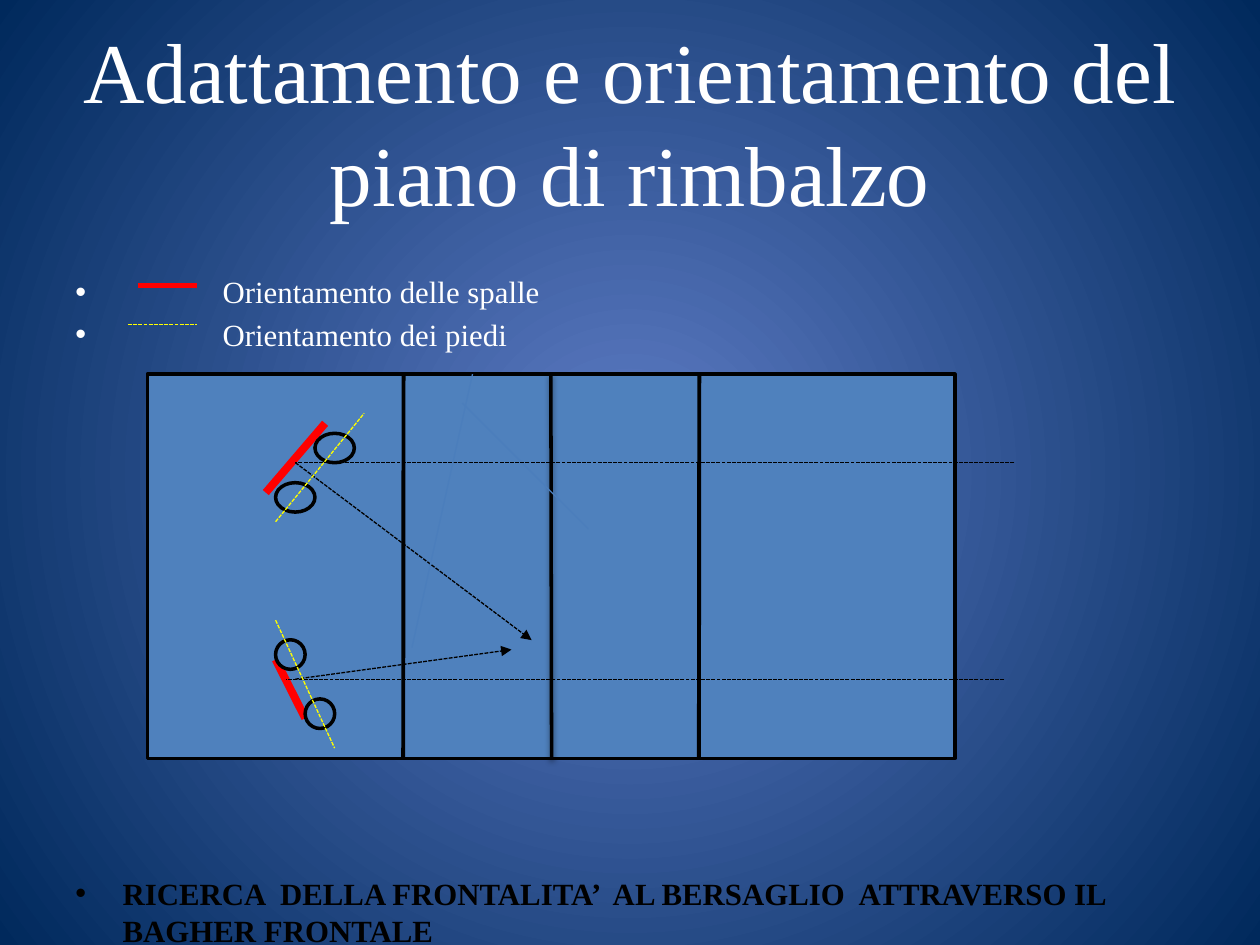
"""Build a volleyball slide on orienting the rebound plane towards the target."""
from lxml.etree import SubElement
from pptx import Presentation
from pptx.dml.color import RGBColor as RGB
from pptx.enum.dml import MSO_LINE_DASH_STYLE as DASH
from pptx.enum.shapes import MSO_CONNECTOR as CONN, MSO_SHAPE as SHAPE
from pptx.enum.text import MSO_ANCHOR as ANCHOR, PP_ALIGN as ALIGN
from pptx.oxml.ns import qn
from pptx.util import Pt

C = {"glow": "5E7CC5", "navy": "00295C", "court": "4F81BD", "faint": "4B7EBC",
     "black": "000000", "white": "FFFFFF", "red": "FF0000", "yellow": "FFFF00"}
FONT = "Times New Roman"

prs = Presentation()
prs.slide_width, prs.slide_height = Pt(720), Pt(540)
s = prs.slides.add_slide(prs.slide_layouts[6])

fill = s.background.fill
fill.gradient()
for stop, name in zip(fill.gradient_stops, ("glow", "navy")):
    stop.color.rgb = RGB.from_string(C[name])
grad = s._element.find(".//" + qn("a:gradFill"))
grad.remove(grad.find(qn("a:lin")))
path = SubElement(grad, qn("a:path"), path="circle")
SubElement(path, qn("a:fillToRect"), l="50000", t="50000", r="50000", b="50000")


def add_box(x, y, w, h):
    tf = s.shapes.add_textbox(Pt(x), Pt(y), Pt(w), Pt(h)).text_frame
    tf.word_wrap = True
    return tf


def add_run(p, text, size, color, pitch, bold=False):
    p.line_spacing = Pt(pitch)
    r = p.add_run()
    r.text = text
    r.font.name, r.font.size, r.font.bold = FONT, Pt(size), bold
    r.font.color.rgb = RGB.from_string(C[color])


tf = add_box(36, 21.6, 648, 90)
tf.vertical_anchor = ANCHOR.MIDDLE
tf.margin_top = Pt(8.6)
tf.paragraphs[0].alignment = ALIGN.CENTER
add_run(tf.paragraphs[0], "Adattamento e orientamento del piano di rimbalzo", 48.6, "white", 58.5)

tf = add_box(36, 152.6, 648, 376.6)
bullets = [
    ("Orientamento delle spalle", "white", False, 84.2, 0),
    ("Orientamento dei piedi", "white", False, 84.2, 3.5),
    ("RICERCA  DELLA FRONTALITA’  AL BERSAGLIO  ATTRAVERSO IL BAGHER FRONTALE",
     "black", True, 27, 298.4),
]
for i, (text, color, bold, indent, before) in enumerate(bullets):
    p = tf.add_paragraph() if i else tf.paragraphs[0]
    p.space_before = Pt(before)
    add_run(p, text, 17.6, color, 21, bold)
    pPr = p._p.get_or_add_pPr()
    pPr.set("marL", str(Pt(indent)))
    pPr.set("indent", str(-Pt(indent)))
    SubElement(pPr, qn("a:buFont"), typeface="Arial")
    SubElement(pPr, qn("a:buChar"), char="•")

TOP, BOTTOM = 213.8, 433.4
items = [
    ("rect", 84.2, TOP, 461.5, BOTTOM - TOP),
    ("shadow", 314.8, TOP, 315.2, BOTTOM, "black", 2),
    ("line", 399.6, TOP, 399.4, BOTTOM, "black", 2.25),
    ("line", 264.2, 230.4, 336.2, 302.4, "faint", 0.75),
    ("line", 230.6, TOP, 230.4, BOTTOM, "black", 2.25),
    ("line", 151.9, 281.5, 185.8, 241.9, "red", 4.5),
    ("dash", 579.6, 264.4, 168.8, 264.4, "black", 0.75),
    ("arrow", 168.8, 264.4, 303.8, 365.8, "black", 0.75),
    ("oval", 157.5, 275.8, 22.5, 16.8),
    ("oval", 180, 247.6, 22.5, 16.8),
    ("line", 270, TOP, 235.4, 370.1, "faint", 0.75),
    ("dash", 157.5, 298.1, 208.1, 236.2, "yellow", 0.75),
    ("line", 78.7, 163.2, 112.5, 163.2, "red", 3),
    ("dash", 73.2, 185.4, 112.5, 185.4, "yellow", 0.75),
    ("line", 157.5, 376.9, 174.4, 410.4, "red", 4.5),
    ("dash", 573.8, 388.1, 163.4, 388.1, "black", 0.75),
    ("arrow", 168.8, 388.1, 292.3, 371.2, "black", 0.75),
    ("oval", 174.4, 399.4, 16.9, 16.9),
    ("oval", 157.5, 365.6, 16.9, 16.9),
    ("dash", 157.5, 354.4, 191.2, 427.5, "yellow", 0.75),
]
for kind, *nums in items:
    place = [Pt(v) for v in nums[:4]]
    color, width = nums[4:] or ("black", 2)
    if kind in ("rect", "oval"):
        sp = s.shapes.add_shape(SHAPE.RECTANGLE if kind == "rect" else SHAPE.OVAL, *place)
        sp.shadow.inherit = False
        sp.fill.solid()
        sp.fill.fore_color.rgb = RGB.from_string(C["court"])
    else:
        sp = s.shapes.add_connector(CONN.STRAIGHT, *place)
    sp.line.color.rgb = RGB.from_string(C[color])
    sp.line.width = Pt(width)
    if kind in ("dash", "arrow"):
        sp.line.dash_style = DASH.SQUARE_DOT
    if kind == "arrow":
        SubElement(sp.line._get_or_add_ln(), qn("a:tailEnd"), type="triangle")
    if kind not in ("rect", "oval"):
        effects = SubElement(sp._element.spPr, qn("a:effectLst"))
        if kind == "shadow":
            shadow = SubElement(effects, qn("a:outerShdw"), blurRad=str(Pt(3.1)),
                                dist=str(Pt(1.6)), dir="5400000", rotWithShape="0")
            tint = SubElement(shadow, qn("a:srgbClr"), val=C["black"])
            SubElement(tint, qn("a:alpha"), val="38000")

prs.save("out.pptx")
